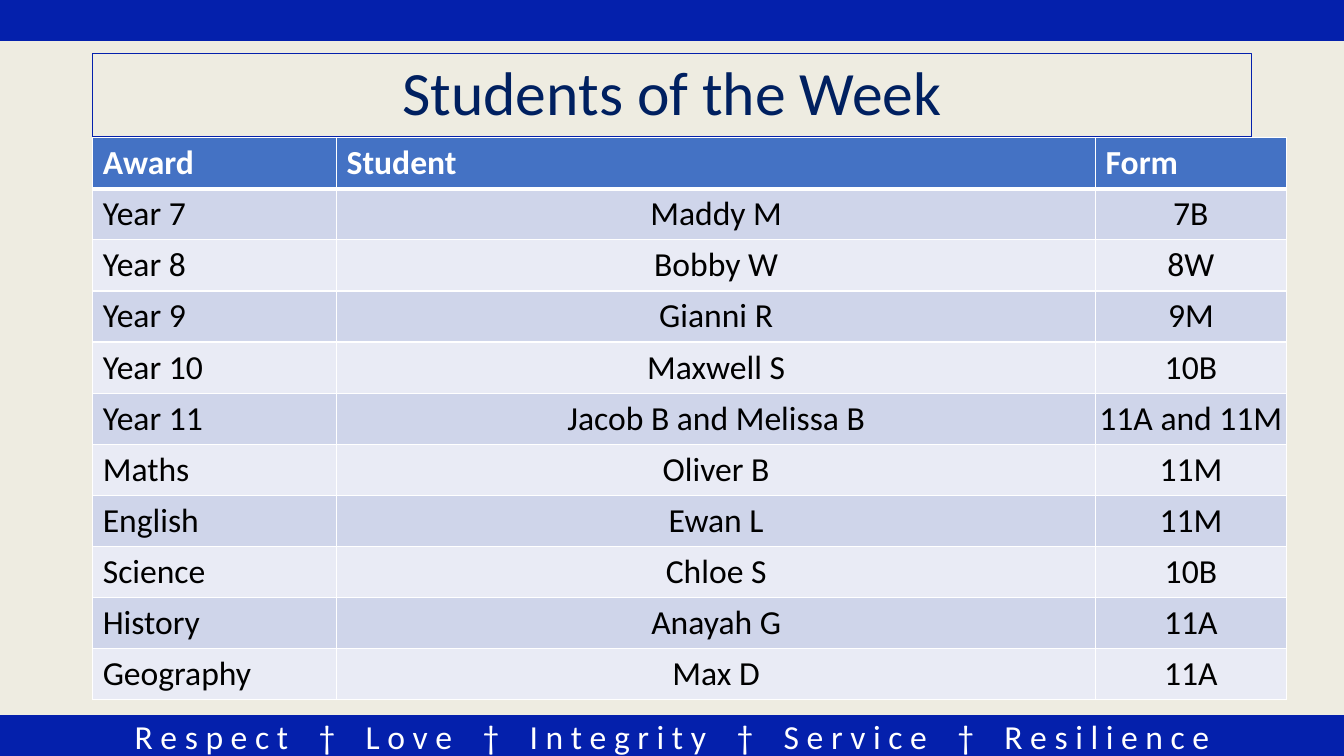
from dataclasses import dataclass

from lxml.etree import SubElement
from pptx import Presentation
from pptx.dml.color import RGBColor
from pptx.enum.shapes import MSO_SHAPE as ShapeKind
from pptx.enum.text import MSO_ANCHOR as Anchor, PP_ALIGN as Align
from pptx.oxml import parse_xml
from pptx.oxml.ns import nsdecls, qn
from pptx.util import Pt

COLORS = {
    "background": "EEECE1",
    "band": "0420AC",
    "title": "002060",
    "header": "4472C4",
    "odd_row": "CFD5EA",
    "even_row": "E9EBF5",
    "white": "FFFFFF",
    "black": "000000",
}
FONT = "Calibri"
SLIDE_WIDTH, SLIDE_HEIGHT = 960, 540
BAND_HEIGHT = 28.8
ROW_HEIGHT = 36
COLUMN_WIDTHS = (174.24, 542.16, 136.08)
TABLE_LEFT, TABLE_TOP = 66.24, 98.3
VALUES = ("Respect", "Love", "Integrity", "Service", "Resilience")
SEPARATOR_SPACING = 16.26


@dataclass
class Box:
    left: float
    top: float
    width: float
    height: float
    line_width: float
    fill: str | None = None


@dataclass
class Winner:
    award: str
    student: str
    form: str


WINNERS = [
    Winner("Year 7", "Maddy M", "7B"),
    Winner("Year 8", "Bobby W", "8W"),
    Winner("Year 9", "Gianni R", "9M"),
    Winner("Year 10", "Maxwell S", "10B"),
    Winner("Year 11", "Jacob B and Melissa B", "11A and 11M"),
    Winner("Maths", "Oliver B", "11M"),
    Winner("English", "Ewan L", "11M"),
    Winner("Science", "Chloe S", "10B"),
    Winner("History", "Anayah G", "11A"),
    Winner("Geography", "Max D", "11A"),
]


def color(name: str) -> RGBColor:
    return RGBColor.from_string(COLORS[name])


def add_text(paragraph, text: str, *, size: float = 24, fill: str = "white",
             bold: bool = False, align=Align.CENTER, spacing: float = 0) -> None:
    paragraph.alignment = align
    run = paragraph.add_run()
    run.text = text
    run.font.name = FONT
    run.font.size = Pt(size)
    run.font.bold = bold
    run.font.color.rgb = color(fill)
    if spacing:
        run.font._element.set("spc", str(round(spacing * 100)))


def add_box(slide, box: Box):
    shape = slide.shapes.add_shape(ShapeKind.RECTANGLE, Pt(box.left), Pt(box.top),
                                   Pt(box.width), Pt(box.height))
    shape.shadow.inherit = False
    if box.fill:
        shape.fill.solid()
        shape.fill.fore_color.rgb = color(box.fill)
    else:
        shape.fill.background()
    shape.line.color.rgb = color("band")
    shape.line.width = Pt(box.line_width)
    shape.text_frame.word_wrap = True
    shape.text_frame.vertical_anchor = Anchor.MIDDLE
    return shape


def set_borders(cell, top: float, bottom: float) -> None:
    properties = cell._tc.get_or_add_tcPr()
    widths = {"lnL": 1, "lnR": 1, "lnT": top, "lnB": bottom}
    for position, (side, width) in enumerate(widths.items()):
        line = parse_xml(f'<a:{side} {nsdecls("a")} w="{int(Pt(width))}"/>')
        solid = SubElement(line, qn("a:solidFill"))
        SubElement(solid, qn("a:srgbClr"), val=COLORS["white"])
        properties.insert(position, line)


def fill_cell(cell, text: str, row: int, column: int) -> None:
    is_header = row == 0
    is_centered = not is_header and column > 0
    row_fill = "header" if is_header else "odd_row" if row % 2 else "even_row"
    cell.fill.solid()
    cell.fill.fore_color.rgb = color(row_fill)
    set_borders(cell, top=3 if row == 1 else 1, bottom=3 if is_header else 1)
    if is_centered:
        cell.vertical_anchor = Anchor.BOTTOM
        cell.margin_left = cell.margin_right = cell.margin_top = Pt(0.75)
    add_text(cell.text_frame.paragraphs[0], text, bold=is_header,
             fill="white" if is_header else "black",
             align=Align.CENTER if is_centered else Align.LEFT)


def add_awards_table(slide) -> None:
    rows = [("Award", "Student", "Form")]
    rows += [(winner.award, winner.student, winner.form) for winner in WINNERS]
    table = slide.shapes.add_table(
        len(rows), len(COLUMN_WIDTHS), Pt(TABLE_LEFT), Pt(TABLE_TOP),
        Pt(sum(COLUMN_WIDTHS)), Pt(ROW_HEIGHT * len(rows))).table
    for column, width in enumerate(COLUMN_WIDTHS):
        table.columns[column].width = Pt(width)
    for row, texts in enumerate(rows):
        table.rows[row].height = Pt(ROW_HEIGHT)
        for column, text in enumerate(texts):
            fill_cell(table.cell(row, column), text, row, column)


def add_values_line(paragraph) -> None:
    for index, value in enumerate(VALUES):
        letters = " ".join(value)
        if index:
            add_text(paragraph, " †", spacing=SEPARATOR_SPACING)
            letters = " " + letters
        add_text(paragraph, letters)


def main() -> None:
    presentation = Presentation()
    presentation.slide_width = Pt(SLIDE_WIDTH)
    presentation.slide_height = Pt(SLIDE_HEIGHT)
    slide = presentation.slides.add_slide(presentation.slide_layouts[6])
    slide.background.fill.solid()
    slide.background.fill.fore_color.rgb = color("background")

    # Bottom band with the school values, then the top band
    bottom_top = SLIDE_HEIGHT - BAND_HEIGHT
    footer = add_box(slide, Box(0, bottom_top, SLIDE_WIDTH, BAND_HEIGHT, 1, "band"))
    add_values_line(footer.text_frame.paragraphs[0])
    add_box(slide, Box(0, 0, SLIDE_WIDTH, BAND_HEIGHT, 1, "band"))

    # Title
    title = add_box(slide, Box(TABLE_LEFT, 38.16, 828, 59.76, 0.75))
    heading = title.text_frame.paragraphs[0]
    heading.line_spacing = 0.9
    add_text(heading, "Students of the Week", size=44, fill="title")

    # Awards
    add_awards_table(slide)
    presentation.save("out.pptx")


if __name__ == "__main__":
    main()
